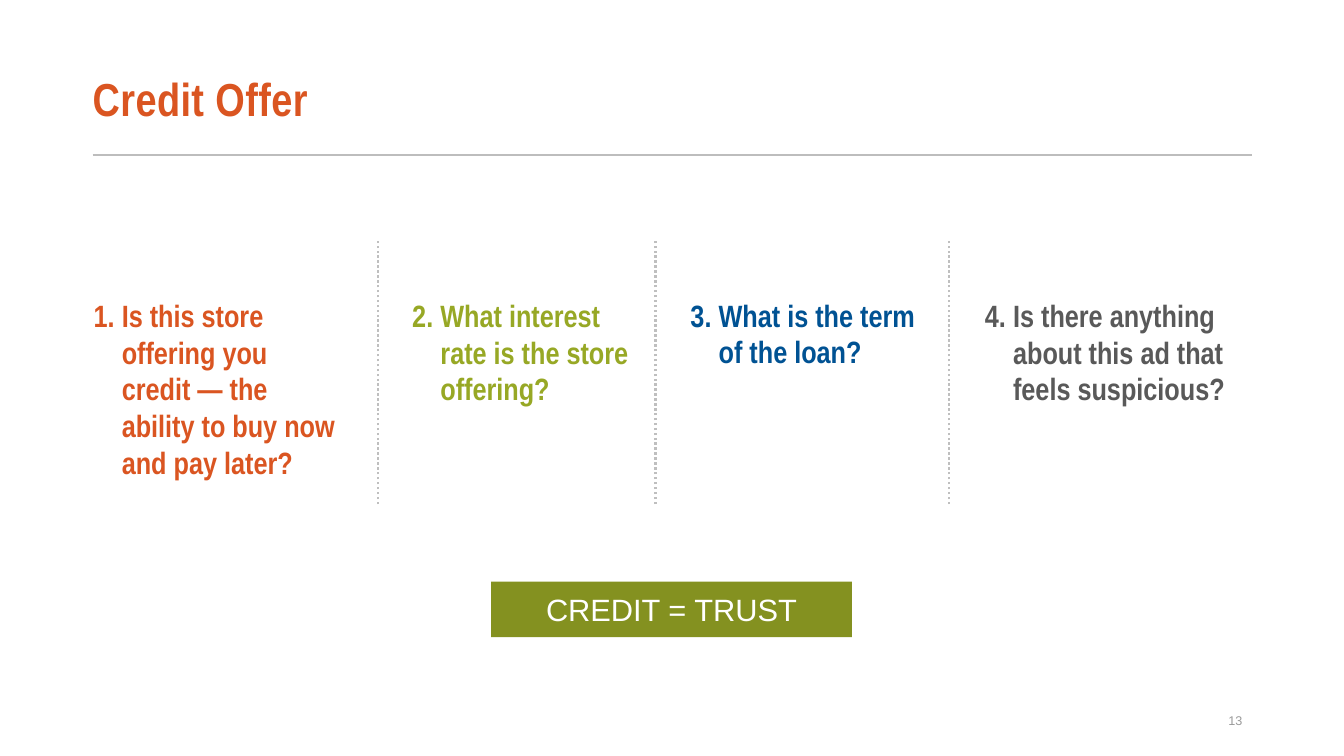
"""Build the Credit Offer slide with four questions about a store's offer."""
from dataclasses import dataclass

import lxml.etree
import pptx
import pptx.dml.color
import pptx.enum.dml
import pptx.enum.shapes
import pptx.enum.text
import pptx.oxml.ns
import pptx.util

Inches = pptx.util.Inches
Pt = pptx.util.Pt
RGBColor = pptx.dml.color.RGBColor
Align = pptx.enum.text.PP_ALIGN
Anchor = pptx.enum.text.MSO_ANCHOR
qn = pptx.oxml.ns.qn

ORANGE = RGBColor(0xDA, 0x55, 0x21)
LIME = RGBColor(0x97, 0xA8, 0x25)
BLUE = RGBColor(0x00, 0x52, 0x93)
CHARCOAL = RGBColor(0x59, 0x59, 0x59)
OLIVE = RGBColor(0x84, 0x91, 0x20)
WHITE = RGBColor(0xFF, 0xFF, 0xFF)
RULE_GRAY = RGBColor(0xBD, 0xBD, 0xBD)
DIVIDER_GRAY = RGBColor(0xBF, 0xBF, 0xBF)
NUMBER_GRAY = RGBColor(0x9A, 0x9A, 0x9A)

HEADING_FONT = "Arial Narrow"
BODY_FONT = "Arial"
QUESTION_TOP = 2.89
HANGING = Inches(0.28)
DIVIDER_TOP, DIVIDER_BOTTOM = 2.39, 5


@dataclass(frozen=True)
class Question:
    text: str
    left: float
    width: float
    height: float
    color: RGBColor


@dataclass(frozen=True)
class Rule:
    start: tuple[float, float]
    end: tuple[float, float]
    color: RGBColor
    weight: float
    dotted: bool = False


QUESTIONS = [
    Question("Is this store offering you credit — the ability to buy now and pay later?",
             0.83, 2.66, 1.95, ORANGE),
    Question("What interest rate is the store offering?", 3.99, 2.38, 1.21, LIME),
    Question("What is the term of the loan?", 6.75, 2.67, 0.84, BLUE),
    Question("Is there anything about this ad that feels suspicious?",
             9.67, 2.83, 1.21, CHARCOAL),
]
RULES = [Rule((0.92, 1.54), (12.42, 1.54), RULE_GRAY, 1.5)] + [
    Rule((x, DIVIDER_BOTTOM), (x, DIVIDER_TOP), DIVIDER_GRAY, 1.75, True)
    for x in (3.75, 6.5, 9.41)
]


def add_text(slide, text: str, left: float, top: float, width: float, height: float):
    """Add a wrapping text box and return its frame."""
    box = slide.shapes.add_textbox(Inches(left), Inches(top), Inches(width), Inches(height))
    frame = box.text_frame
    frame.word_wrap = True
    frame.text = text
    return frame


def style(paragraph, font_name: str, size: float, color: RGBColor, bold: bool = False) -> None:
    """Set the font of a whole paragraph."""
    font = paragraph.font
    font.name, font.size, font.bold = font_name, Pt(size), bold
    font.color.rgb = color


def draw_rule(slide, rule: Rule) -> None:
    """Draw a solid or dotted line."""
    connector = slide.shapes.add_connector(
        pptx.enum.shapes.MSO_CONNECTOR.STRAIGHT,
        *map(Inches, rule.start), *map(Inches, rule.end))
    connector.line.color.rgb = rule.color
    connector.line.width = Pt(rule.weight)
    if rule.dotted:
        connector.line.dash_style = pptx.enum.dml.MSO_LINE.ROUND_DOT
    lxml.etree.SubElement(connector._element.spPr, qn("a:effectLst"))


def draw_question(slide, number: int, question: Question) -> None:
    """Draw one numbered question with a hanging indent."""
    frame = add_text(slide, question.text, question.left, QUESTION_TOP,
                     question.width, question.height)
    frame.auto_size = pptx.enum.text.MSO_AUTO_SIZE.SHAPE_TO_FIT_TEXT
    paragraph = frame.paragraphs[0]
    properties = paragraph._p.get_or_add_pPr()
    properties.set("marL", str(HANGING))
    properties.set("indent", str(-HANGING))
    lxml.etree.SubElement(properties, qn("a:buFont"), typeface="+mj-lt")
    lxml.etree.SubElement(properties, qn("a:buAutoNum"),
                          type="arabicPeriod", startAt=str(number))
    style(paragraph, HEADING_FONT, 22, question.color, True)


def draw_title(slide) -> None:
    """Draw the slide title."""
    frame = add_text(slide, "Credit Offer", 0.92, 0.54, 11.5, 0.94)
    frame.margin_left = 0
    frame.vertical_anchor = Anchor.MIDDLE
    paragraph = frame.paragraphs[0]
    paragraph.line_spacing = 0.87
    style(paragraph, HEADING_FONT, 33, ORANGE, True)
    paragraph.runs[0]._r.get_or_add_rPr().set("spc", "30")


def draw_takeaway(slide) -> None:
    """Draw the filled takeaway banner."""
    banner = slide.shapes.add_shape(
        pptx.enum.shapes.MSO_SHAPE.RECTANGLE,
        Inches(4.87), Inches(5.77), Inches(3.58), Inches(0.55))
    banner.shadow.inherit = False
    banner.fill.solid()
    banner.fill.fore_color.rgb = OLIVE
    banner.line.fill.background()
    frame = banner.text_frame
    frame.text = "CREDIT = TRUST"
    frame.vertical_anchor = Anchor.MIDDLE
    paragraph = frame.paragraphs[0]
    paragraph.alignment = Align.CENTER
    style(paragraph, BODY_FONT, 22, WHITE)


def draw_page_number(slide) -> None:
    """Draw the page number at the lower right."""
    frame = add_text(slide, "13", 9.42, 6.95, 3, 0.4)
    frame.vertical_anchor = Anchor.MIDDLE
    paragraph = frame.paragraphs[0]
    paragraph.alignment = Align.RIGHT
    style(paragraph, BODY_FONT, 9, NUMBER_GRAY)


def main() -> None:
    """Build and save the presentation."""
    deck = pptx.Presentation()
    deck.slide_width, deck.slide_height = Inches(13.33), Inches(7.5)
    slide = deck.slides.add_slide(deck.slide_layouts[6])
    draw_title(slide)
    for rule in RULES:
        draw_rule(slide, rule)
    for number, question in enumerate(QUESTIONS, start=1):
        draw_question(slide, number, question)
    draw_takeaway(slide)
    draw_page_number(slide)
    deck.save("out.pptx")


if __name__ == "__main__":
    main()
